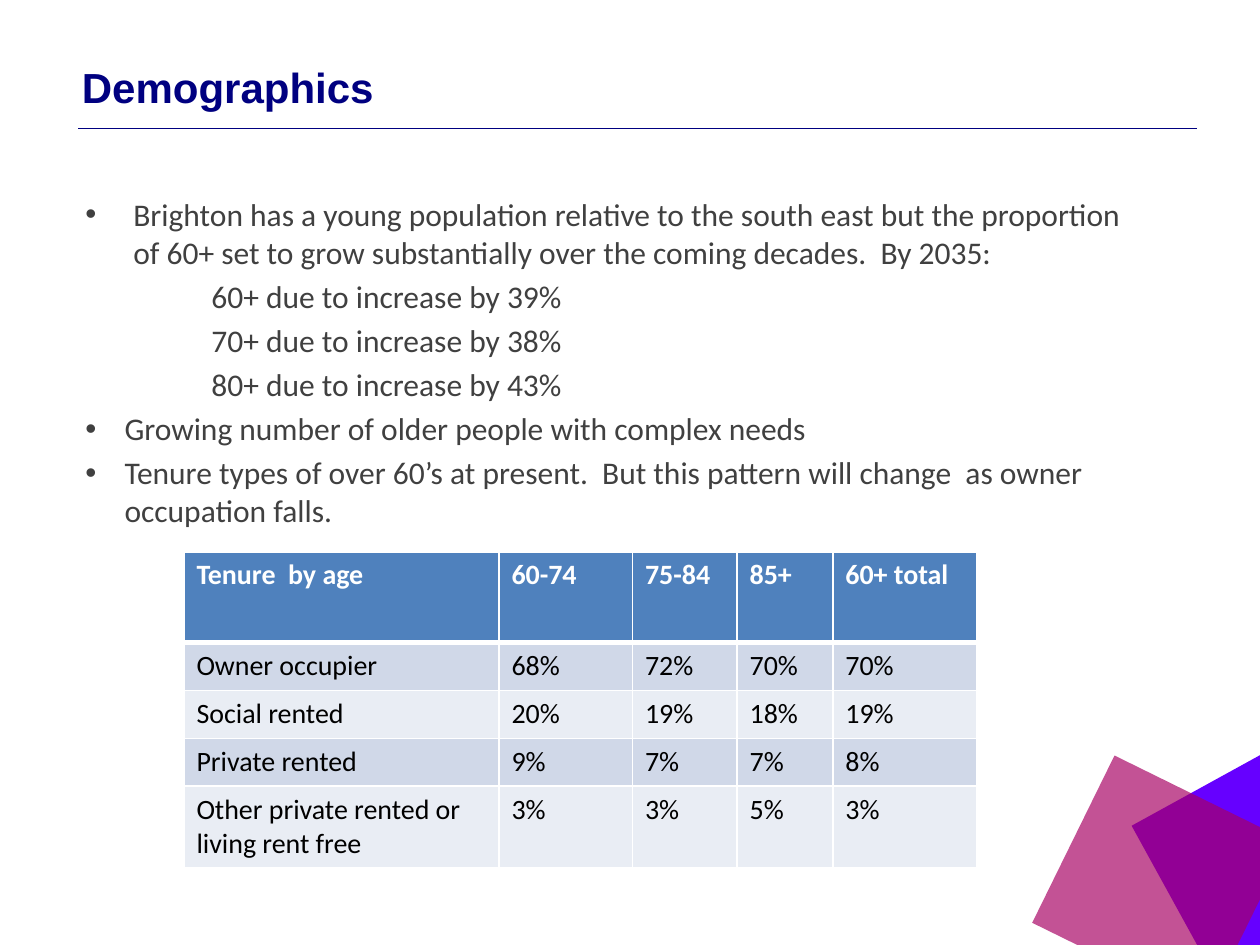
from pptx import Presentation, util as u
from pptx.dml.color import RGBColor
from pptx.enum import shapes, text
from pptx.oxml.ns import qn
from lxml import etree

HUE = {
    "navy": "000080", "ink": "404040", "blue": "6600FF", "pink": "A80063",
    "head": "4F81BD", "odd": "D0D8E8", "even": "E9EDF4",
    "white": "FFFFFF", "black": "000000",
}
TITLE = "Demographics"
BODY = [
    ("Brighton has a young population relative to the south east but the "
     "proportion of 60+ set to grow substantially over the coming decades.  "
     "By 2035:", 0.38, True),
    ("60+ due to increase by 39%", 1, False),
    ("70+ due to increase by 38%", 1, False),
    ("80+ due to increase by 43%", 1, False),
    ("Growing number of older people with complex needs", 0.31, True),
    ("Tenure types of over 60’s at present.  But this pattern will change  "
     "as owner occupation falls.", 0.31, True),
]
TABLE = [
    ("Tenure  by age", "60-74", "75-84", "85+", "60+ total"),
    ("Owner occupier", "68%", "72%", "70%", "70%"),
    ("Social rented", "20%", "19%", "18%", "19%"),
    ("Private rented", "9%", "7%", "7%", "8%"),
    ("Other private rented or living rent free", "3%", "3%", "5%", "3%"),
]
COLS = [2.5, 1.06, 0.83, 0.76, 1.14]
ROWS = [0.72, 0.38, 0.38, 0.38, 0.65]
SQUARES = [
    ((9.25, 6.1, 1.5, 1.5), 331.2, "blue", 100),
    ((8.47, 6.23, 1.48, 1.54), 296.2, "pink", 68),
]


def rgb(name):
    return RGBColor.from_string(HUE[name])


def box(*nums):
    return [u.Inches(n) for n in nums]


def sub(node, tag, **keys):
    return etree.SubElement(node, qn(tag), keys)


def style(font, face, size, hue, bold=False):
    font.name, font.size, font.bold = face, u.Pt(size), bold
    font.color.rgb = rgb(hue)


def square(slide, place, turn, hue, alpha):
    item = slide.shapes.add_shape(shapes.MSO_SHAPE.RECTANGLE, *box(*place))
    item.rotation = turn
    item.shadow.inherit = False
    item.fill.solid()
    item.fill.fore_color.rgb = rgb(hue)
    item.line.fill.background()
    if alpha < 100:
        tint = item.fill._xPr.find(qn("a:solidFill"))[0]
        sub(tint, "a:alpha", val=str(alpha * 1000))


def rule(slide):
    line = slide.shapes.add_connector(
        shapes.MSO_CONNECTOR.STRAIGHT, *box(0.62, 1.02, 9.5, 1.02))
    line.line.color.rgb = rgb("navy")
    line.line.width = u.Pt(0.75)
    sub(line._element.spPr, "a:effectLst")


def title(slide):
    item = slide.shapes.title
    item.left, item.top, item.width, item.height = box(0.55, 0.3, 9, 0.77)
    frame = item.text_frame
    frame.text = TITLE
    frame.vertical_anchor = text.MSO_ANCHOR.MIDDLE
    para = frame.paragraphs[0]
    para.alignment = text.PP_ALIGN.LEFT
    style(para.runs[0].font, "Arial", 24, "navy", True)


def body(slide):
    frame = slide.shapes.add_textbox(*box(0.58, 1.5, 8.62, 2.8)).text_frame
    frame.word_wrap = True
    frame.text = "\n".join(row[0] for row in BODY)
    for i, (para, (_, left, dot)) in enumerate(zip(frame.paragraphs, BODY)):
        if i:
            para.space_before = u.Pt(3.6)
        props = para._p.get_or_add_pPr()
        props.set("marL", str(u.Inches(left)))
        props.set("indent", str(-u.Inches(left) if dot else 0))
        if dot:
            sub(props, "a:buFont", typeface="Arial")
            sub(props, "a:buChar", char="•")
        else:
            sub(props, "a:buNone")
        style(para.font, "Calibri", 18, "ink")
        style(para.runs[0].font, "Calibri", 18, "ink")


def edge(cell, sides):
    props = cell._tc.get_or_add_tcPr()
    for i, (side, width) in enumerate(sides.items()):
        line = etree.Element(qn("a:" + side), w=str(u.Pt(width)))
        fill = sub(line, "a:solidFill")
        sub(fill, "a:srgbClr", val=HUE["white"])
        props.insert(i, line)


def table(slide):
    grid = slide.shapes.add_table(
        len(ROWS), len(COLS), *box(1.46, 4.38, sum(COLS), sum(ROWS))).table
    for col, wide in zip(grid.columns, COLS):
        col.width = u.Inches(wide)
    for r, (row, high) in enumerate(zip(grid.rows, ROWS)):
        row.height = u.Inches(high)
        top = r == 0
        fill = "head" if top else "odd" if r % 2 else "even"
        sides = {"lnL": 1, "lnR": 1, "lnT": 3 if r == 1 else 1,
                 "lnB": 3 if top else 1}
        for cell, word in zip(row.cells, TABLE[r]):
            cell.text = word
            cell.fill.solid()
            cell.fill.fore_color.rgb = rgb(fill)
            font = cell.text_frame.paragraphs[0].runs[0].font
            style(font, "Calibri", 16, "white" if top else "black", top)
            edge(cell, sides)


def main():
    deck = Presentation()
    deck.slide_width, deck.slide_height = box(10, 7.5)
    slide = deck.slides.add_slide(deck.slide_layouts[5])
    for item in SQUARES:
        square(slide, *item)
    rule(slide)
    title(slide)
    body(slide)
    table(slide)
    deck.save("out.pptx")


if __name__ == "__main__":
    main()
